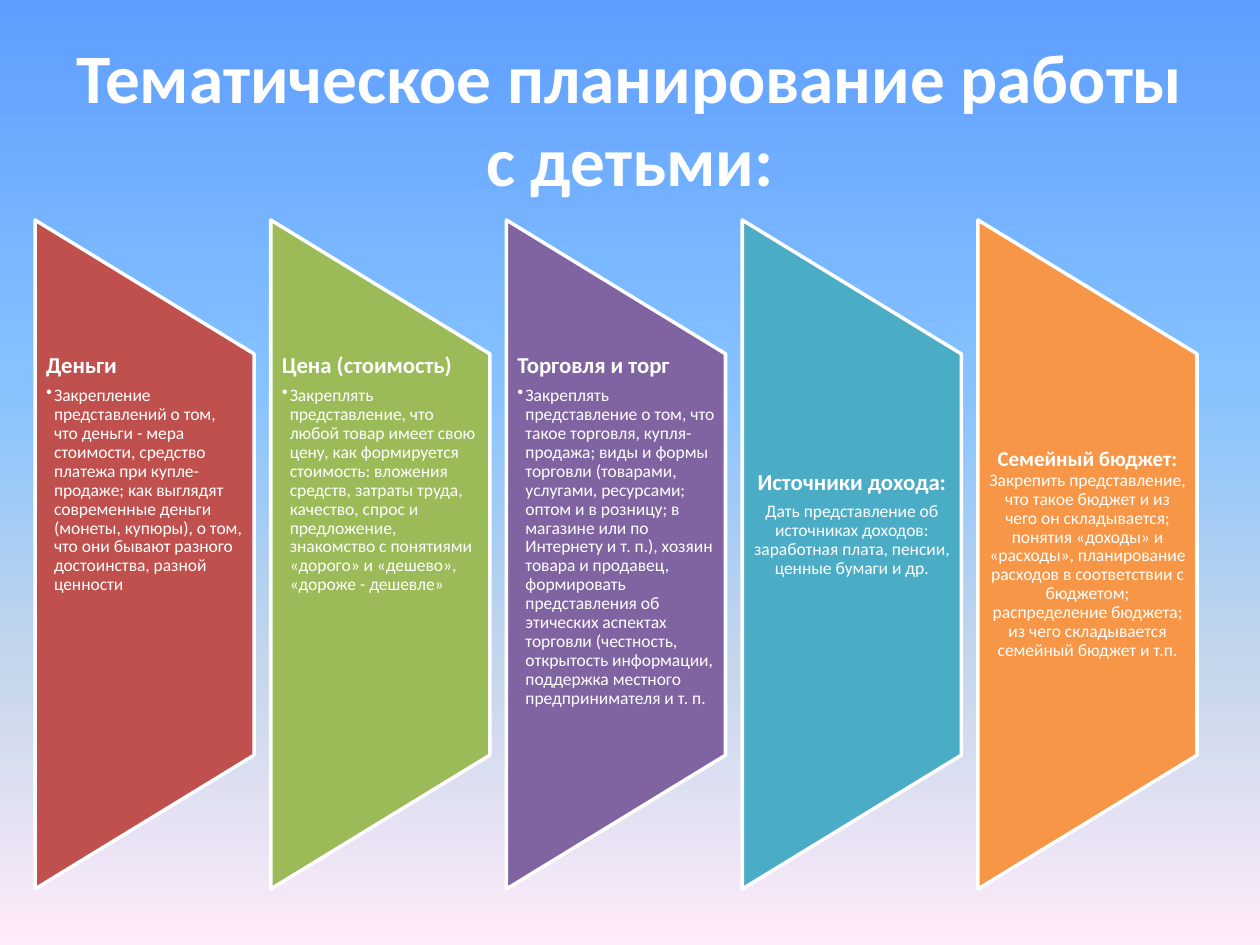
from lxml.etree import SubElement
from pptx import Presentation
from pptx.dml.color import RGBColor
from pptx.enum.shapes import MSO_SHAPE as Shape
from pptx.enum.text import MSO_ANCHOR as Anchor, MSO_AUTO_SIZE as AutoSize, PP_ALIGN as Align
from pptx.oxml.ns import qn
from pptx.util import Pt

TITLE = "Тематическое планирование работы с детьми:"
SKY = [(0, "5E9EFF"), (40, "85C2FF"), (70, "C4D6EB"), (100, "FFEBFA")]
WHITE = "FFFFFF"

# Heading, description, colour and format of each theme
THEMES = [
    ("Деньги",
     "Закрепление представлений о том, что деньги - мера стоимости, средство "
     "платежа при купле-продаже; как выглядят современные деньги (монеты, купюры), "
     "о том, что они бывают разного достоинства, разной ценности",
     "C0504D", {}),
    ("Цена (стоимость)",
     "Закреплять представление, что любой товар имеет свою цену, как формируется "
     "стоимость: вложения средств, затраты труда, качество, спрос и предложение, "
     "знакомство с понятиями «дорого» и «дешево», «дороже - дешевле»",
     "9BBB59", {}),
    ("Торговля и торг",
     "Закреплять представление о том, что такое торговля, купля-продажа; виды и "
     "формы торговли (товарами, услугами, ресурсами; оптом и в розницу; в магазине "
     "или по Интернету и т. п.), хозяин товара и продавец, формировать представления "
     "об этических аспектах торговли (честность, открытость информации, поддержка "
     "местного предпринимателя и т. п.",
     "8064A2", {}),
    ("Источники дохода:",
     "Дать представление об источниках доходов: заработная плата, пенсии, ценные "
     "бумаги и др.",
     "4BACC6", {"centred": True, "raised": 60}),
    ("Семейный бюджет: ",
     "Закрепить представление, что такое бюджет и из чего он складывается; понятия "
     "«доходы» и «расходы», планирование расходов в соответствии с бюджетом; "
     "распределение бюджета; из чего складывается семейный бюджет и т.п.",
     "F79646", {"centred": True, "joined": True, "heading_size": 12, "inset": 10}),
]


def px(length):
    return round(length * 914400 / 126)


def box_px(*lengths):
    return [px(length) for length in lengths]


def rgb(color):
    return RGBColor.from_string(color)


def write(paragraph, text, size, bold=False, color=WHITE, align=Align.LEFT,
          line=None, after=None):
    run = paragraph.add_run()
    run.text = text
    run.font.name = "Calibri"
    run.font.size = Pt(size)
    run.font.bold = bold
    run.font.color.rgb = rgb(color)
    paragraph.alignment = align
    paragraph.line_spacing = line
    paragraph.space_after = after


def add_bullet(paragraph, indent):
    properties = paragraph._p.get_or_add_pPr()
    properties.set("marL", str(px(indent)))
    properties.set("indent", str(-px(indent)))
    SubElement(properties, qn("a:buChar"), char="•")


def paint_background(slide, stops):
    fill = slide.background.fill
    fill.gradient()
    fill.gradient_angle = 270
    stop_list = slide.element.find(".//" + qn("a:gsLst"))
    for stop in list(stop_list):
        stop_list.remove(stop)
    for percent, color in stops:
        stop = SubElement(stop_list, qn("a:gs"), pos=str(percent * 1000))
        SubElement(stop, qn("a:srgbClr"), val=color)


def place_title(slide, left, top, width, height):
    title = slide.shapes.title
    title.left, title.top, title.width, title.height = box_px(left, top, width, height)
    frame = title.text_frame
    frame.word_wrap = True
    frame.auto_size = AutoSize.NONE
    frame.vertical_anchor = Anchor.MIDDLE
    write(frame.paragraphs[0], TITLE, 39.6, bold=True, align=Align.CENTER)


def add_panel(slide, left, top, width, height, color):
    """Draw a trapezoid turned on its side so that it fills the given box."""
    shift = (height - width) / 2
    panel = slide.shapes.add_shape(Shape.FLOWCHART_MANUAL_OPERATION,
                                   *box_px(left - shift, top + shift, height, width))
    panel.rotation = 270
    panel.shadow.inherit = False
    panel.fill.solid()
    panel.fill.fore_color.rgb = rgb(color)
    panel.line.color.rgb = rgb(WHITE)
    panel.line.width = Pt(2)


def add_theme_text(slide, left, top, width, height, heading, description,
                   centred=False, joined=False, raised=0, heading_size=13, inset=11):
    frame = slide.shapes.add_textbox(*box_px(left, top, width, height)).text_frame
    frame.word_wrap = True
    frame.vertical_anchor = Anchor.MIDDLE if centred else Anchor.TOP
    frame.margin_left = frame.margin_right = px(inset)
    frame.margin_top, frame.margin_bottom = 0, px(raised)
    layout = {"align": Align.CENTER if centred else Align.LEFT,
              "line": 0.9, "after": Pt(4.5)}
    first = frame.paragraphs[0]
    write(first, heading, heading_size, bold=True, **layout)
    details = first if joined else frame.add_paragraph()
    write(details, description, 10, **layout)
    if not centred:
        add_bullet(details, 8)


def add_themes(slide, left, top, width, height, panel_width):
    pitch = (width - panel_width) / (len(THEMES) - 1)
    for index, (heading, description, color, options) in enumerate(THEMES):
        panel_left = left + index * pitch
        add_panel(slide, panel_left, top, panel_width, height, color)
        add_theme_text(slide, panel_left, top + height / 5, panel_width, height * 3 / 5,
                       heading, description, **options)


def main():
    deck = Presentation()
    deck.slide_width, deck.slide_height = box_px(1260, 945)
    slide = deck.slides.add_slide(deck.slide_layouts[5])
    paint_background(slide, SKY)
    place_title(slide, 63, 38, 1134, 158)
    add_themes(slide, 35, 220, 1162, 669, panel_width=219)
    deck.save("out.pptx")


if __name__ == "__main__":
    main()
